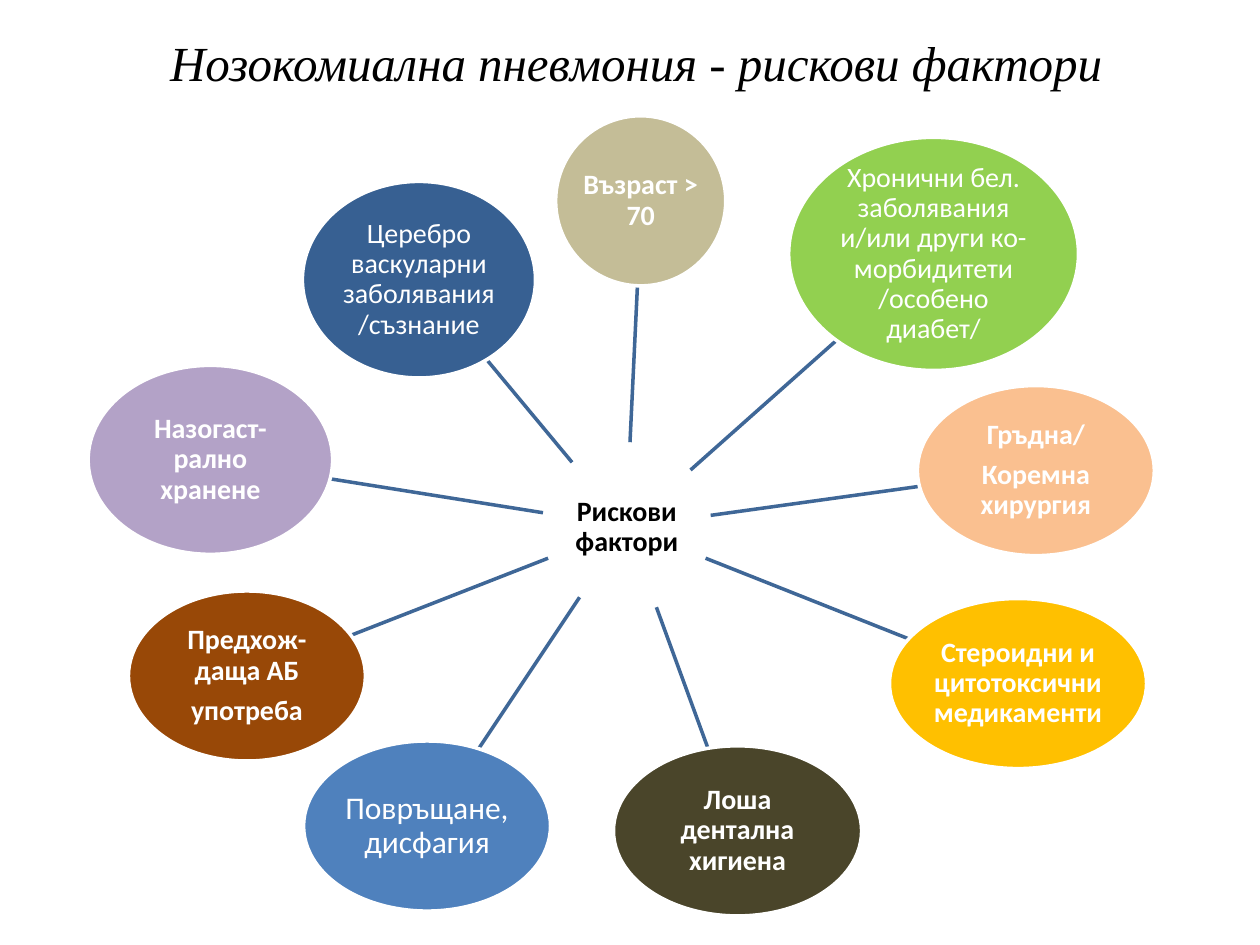
from dataclasses import dataclass
from typing import Optional

from lxml import etree
from pptx import Presentation
from pptx.dml.color import RGBColor
from pptx.enum.shapes import MSO_CONNECTOR, MSO_SHAPE
from pptx.enum.text import MSO_ANCHOR, PP_ALIGN
from pptx.oxml.ns import qn
from pptx.util import Pt

OVAL = MSO_SHAPE.OVAL
STRAIGHT = MSO_CONNECTOR.STRAIGHT
MIDDLE = MSO_ANCHOR.MIDDLE
CENTER = PP_ALIGN.CENTER

COLORS = {
    "white": "FFFFFF", "black": "000000", "spoke": "3F6797",
    "tan": "C4BD97", "green": "92D050", "peach": "FAC090",
    "gold": "FFC000", "olive": "4A452A", "blue": "4F81BD",
    "brown": "984807", "lilac": "B3A2C7", "navy": "376092",
}
INSET = 0.72
EDGE = 2
GAP = 0.35  # space after, as a share of the text size


@dataclass
class Node:
    text: str
    box: tuple  # left, top, width, height
    fill: Optional[str]
    spoke: Optional[tuple] = None  # x and y at the hub, then at the node
    size: int = 16
    bold: bool = True
    ink: str = "white"


HUB = Node("Рискови фактори", (309.6, 252.7, 97.2, 97.2), None, ink="black")

# Risk factors, clockwise from the top
NODES = [
    Node("Възраст > 70", (317.5, 66.2, 97.2, 97.2), "tan",
         (360, 252.7, 364.3, 162.7)),
    Node("Хронични бел. заболявания и/или други ко-морбидитети "
         "/особено диабет/", (450.7, 78.5, 165.6, 133.2), "green",
         (394.6, 268.6, 478.1, 194.4), bold=False),
    Node("Гръдна/\nКоремна хирургия", (524.2, 220.3, 135.4, 97.2), "peach",
         (406.1, 294.5, 525.6, 277.9)),
    Node("Стероидни и цитотоксични медикаменти",
         (508.3, 342, 146.9, 97.2), "gold", (403.2, 319, 519.1, 365)),
    Node("Лоша дентална хигиена", (350.6, 426.2, 141.8, 97.2), "olive",
         (375.1, 347, 404.6, 427.7)),
    Node("Повръщане, дисфагия", (173.5, 423.4, 141.1, 97.2), "blue",
         (331.2, 341.3, 273.6, 427.7), size=18, bold=False),
    Node("Предхож-даща АБ\nупотреба", (73.4, 337.7, 135.4, 97.2), "brown",
         (313.2, 319, 200.9, 362.9)),
    Node("Назогаст-рално хранене", (50.4, 208.8, 139.7, 108), "lilac",
         (310.3, 293, 188.6, 273.6)),
    Node("Церебро васкуларни заболявания/съзнание",
         (172.8, 103.7, 133.2, 112.3), "navy",
         (326.9, 264.2, 277.9, 205.2), bold=False),
]


def color(name: str) -> RGBColor:
    return RGBColor.from_string(COLORS[name])


def apply(item, style: dict) -> None:
    for key, value in style.items():
        setattr(item, key, value)


def write(frame, text: str, ink: str, para: dict, font: dict) -> None:
    frame.text = text
    for line in frame.paragraphs:
        apply(line, {"alignment": CENTER, **para})
        apply(line.font, font)
        line.font.color.rgb = color(ink)


def add_title(slide) -> None:
    box = slide.shapes.add_textbox(Pt(39.5), Pt(21.6), Pt(648), Pt(27.4))
    apply(box.text_frame, {"word_wrap": True, "vertical_anchor": MIDDLE})
    write(box.text_frame, "Нозокомиална пневмония - рискови фактори", "black",
          {}, {"name": "Times New Roman", "size": Pt(28), "italic": True})


def add_spoke(slide, ends: tuple) -> None:
    line = slide.shapes.add_connector(STRAIGHT, *map(Pt, ends))
    line.line.color.rgb = color("spoke")
    line.line.width = Pt(EDGE)
    etree.SubElement(line._element.spPr, qn("a:effectLst"))


def add_node(slide, node: Node) -> None:
    if node.spoke:
        add_spoke(slide, node.spoke)
    oval = slide.shapes.add_shape(OVAL, *map(Pt, node.box))
    oval.shadow.inherit = False
    if node.fill:
        oval.fill.solid()
        oval.fill.fore_color.rgb = color(node.fill)
    else:
        oval.fill.background()
    oval.line.color.rgb = color("white")
    oval.line.width = Pt(EDGE)
    frame = oval.text_frame
    sides = ("left", "top", "right", "bottom")
    apply(frame, {f"margin_{side}": Pt(INSET) for side in sides})
    apply(frame, {"word_wrap": True, "vertical_anchor": MIDDLE})
    write(frame, node.text, node.ink,
          {"line_spacing": 0.9, "space_after": Pt(node.size * GAP)},
          {"name": "Calibri", "size": Pt(node.size), "bold": node.bold})


def main() -> None:
    deck = Presentation()
    apply(deck, {"slide_width": Pt(720), "slide_height": Pt(540)})
    slide = deck.slides.add_slide(deck.slide_layouts[6])
    add_title(slide)
    for node in [HUB, *NODES]:
        add_node(slide, node)
    deck.save("out.pptx")


if __name__ == "__main__":
    main()
